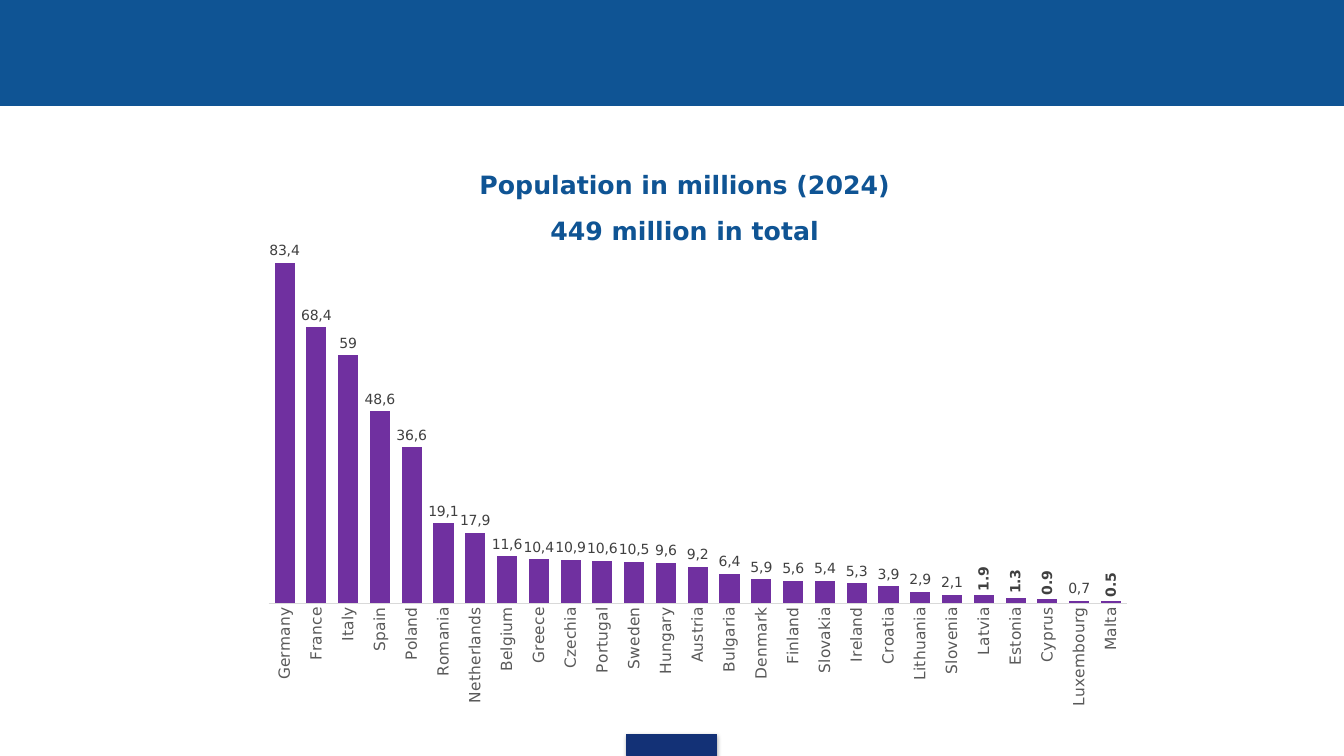
from lxml import etree
from pptx import Presentation
from pptx.chart.data import CategoryChartData
from pptx.dml.color import RGBColor
from pptx.enum.chart import XL_CHART_TYPE, XL_LABEL_POSITION, XL_TICK_LABEL_POSITION, XL_TICK_MARK
from pptx.enum.shapes import MSO_SHAPE
from pptx.enum.text import PP_ALIGN
from pptx.oxml import parse_xml
from pptx.oxml.ns import nsdecls, qn
from pptx.util import Cm, Pt

BLUE = RGBColor(0x0F, 0x54, 0x94)
NAVY = RGBColor(0x13, 0x31, 0x76)
PURPLE = RGBColor(0x70, 0x30, 0xA0)
LABEL_GREY = RGBColor(0x40, 0x40, 0x40)
AXIS_GREY = RGBColor(0x59, 0x59, 0x59)
LINE_GREY = RGBColor(0xD9, 0xD9, 0xD9)
FONT = "DejaVu Sans"
UPWARD = "-5400000"

# Country, bar value, label written on the bar (None shows the value itself)
POPULATION = [
    ("Germany", 82.9, "83,4"), ("France", 67.2, "68,4"), ("Italy", 60.4, "59"),
    ("Spain", 46.7, "48,6"), ("Poland", 38, "36,6"), ("Romania", 19.5, "19,1"),
    ("Netherlands", 17.2, "17,9"), ("Belgium", 11.4, "11,6"), ("Greece", 10.7, "10,4"),
    ("Czechia", 10.6, "10,9"), ("Portugal", 10.3, "10,6"), ("Sweden", 10.1, "10,5"),
    ("Hungary", 9.8, "9,6"), ("Austria", 8.8, "9,2"), ("Bulgaria", 7.1, "6,4"),
    ("Denmark", 5.8, "5,9"), ("Finland", 5.5, "5,6"), ("Slovakia", 5.4, "5,4"),
    ("Ireland", 4.8, "5,3"), ("Croatia", 4.1, "3,9"), ("Lithuania", 2.8, "2,9"),
    ("Slovenia", 2, "2,1"), ("Latvia", 1.9, None), ("Estonia", 1.3, None),
    ("Cyprus", 0.9, None), ("Luxembourg", 0.6, "0,7"), ("Malta", 0.5, None),
]


def set_font(font, size, color, bold=False):
    font.name, font.size, font.bold = FONT, Pt(size), bold
    font.color.rgb = color


def add_text(slide, box, lines, size, color, bold=False, align=PP_ALIGN.CENTER, spacing=1.0):
    tf = slide.shapes.add_textbox(*box).text_frame
    tf.word_wrap = True
    tf.margin_left = tf.margin_right = tf.margin_top = tf.margin_bottom = 0
    for i, line in enumerate(lines):
        p = tf.paragraphs[0] if i == 0 else tf.add_paragraph()
        p.alignment, p.line_spacing = align, spacing
        r = p.add_run()
        r.text = line
        set_font(r.font, size, color, bold)


def add_block(slide, box, color):
    sp = slide.shapes.add_shape(MSO_SHAPE.RECTANGLE, *box)
    sp.shadow.inherit = False
    sp.fill.solid()
    sp.fill.fore_color.rgb = color
    sp.line.color.rgb = color
    sp.line.width = Pt(0.75)
    return sp


def add_shadow(sp):
    effects = sp._element.spPr.find(qn("a:effectLst"))
    effects.append(parse_xml(
        f'<a:outerShdw {nsdecls("a")} blurRad="{Pt(3.1)}" dist="{Pt(1.8)}" dir="5400000" rotWithShape="0">'
        '<a:srgbClr val="000000"><a:alpha val="35000"/></a:srgbClr></a:outerShdw>'))


def rotate(body, angle):
    body.set("rot", angle)
    body.set("vert", "horz")


def place_plot(chart, **fractions):
    plot_area = chart._chartSpace.chart.plotArea
    for old in plot_area.findall(qn("c:layout")):
        plot_area.remove(old)
    layout = parse_xml(f'<c:layout {nsdecls("c")}><c:manualLayout/></c:layout>')
    settings = {"layoutTarget": "inner", "xMode": "edge", "yMode": "edge", **fractions}
    for tag, val in settings.items():
        etree.SubElement(layout[0], qn(f"c:{tag}")).set("val", str(val))
    plot_area.insert(0, layout)


def add_labels(plot, series):
    labels = series.data_labels
    labels.show_value = True
    labels.position = XL_LABEL_POSITION.OUTSIDE_END
    set_font(labels.font, 10, LABEL_GREY, bold=True)
    rotate(labels._element.find(qn("c:txPr")).find(qn("a:bodyPr")), UPWARD)
    for i, (_, _, text) in enumerate(POPULATION):
        if text is None:
            continue
        label = series.points[i].data_label
        tf = label.text_frame
        rotate(tf._txBody.bodyPr, "0")
        r = tf.paragraphs[0].add_run()
        r.text = text
        set_font(r.font, 10, LABEL_GREY)
        label.position = XL_LABEL_POSITION.OUTSIDE_END


def add_population_chart(slide, box):
    data = CategoryChartData()
    data.categories = [country for country, _, _ in POPULATION]
    data.add_series("Series 1", [value for _, value, _ in POPULATION])
    chart = slide.shapes.add_chart(XL_CHART_TYPE.COLUMN_CLUSTERED, *box, data).chart
    chart.has_legend = chart.has_title = False
    set_font(chart.font, 10, RGBColor(0, 0, 0))
    place_plot(chart, x=0.02, y=0.02, w=0.96, h=0.75)

    # Bars
    plot = chart.plots[0]
    plot.vary_by_categories = False
    plot.gap_width, plot.overlap = 58, -27
    series = plot.series[0]
    series.format.fill.solid()
    series.format.fill.fore_color.rgb = PURPLE
    add_labels(plot, series)

    # Axes
    value_axis = chart.value_axis
    value_axis.minimum_scale, value_axis.maximum_scale = 0, 90
    value_axis.has_major_gridlines = False
    value_axis.visible = False
    axis = chart.category_axis
    axis.major_tick_mark = axis.minor_tick_mark = XL_TICK_MARK.NONE
    axis.tick_label_position = XL_TICK_LABEL_POSITION.NEXT_TO_AXIS
    axis.format.line.color.rgb = LINE_GREY
    axis.format.line.width = Pt(0.75)
    set_font(axis.tick_labels.font, 11, AXIS_GREY)
    rotate(axis._element.find(qn("c:txPr")).find(qn("a:bodyPr")), UPWARD)


def main():
    prs = Presentation()
    prs.slide_width, prs.slide_height = Cm(33.87), Cm(19.05)
    slide = prs.slides.add_slide(prs.slide_layouts[6])

    # Header band and footer tab
    add_block(slide, (0, 0, prs.slide_width, Cm(2.67)), BLUE)
    add_shadow(add_block(slide, (Cm(15.8), Cm(18.5), Cm(2.26), Cm(0.55)), NAVY))

    # Chart under its heading
    add_population_chart(slide, (Cm(6.32), Cm(5.64), Cm(22.53), Cm(12.42)))
    add_text(slide, (Cm(6.32), Cm(3.89), Cm(21.87), Cm(2.25)),
             ["Population in millions (2024)", "449 million in total"],
             18, BLUE, bold=True, spacing=1.5)

    prs.save("out.pptx")


if __name__ == "__main__":
    main()
